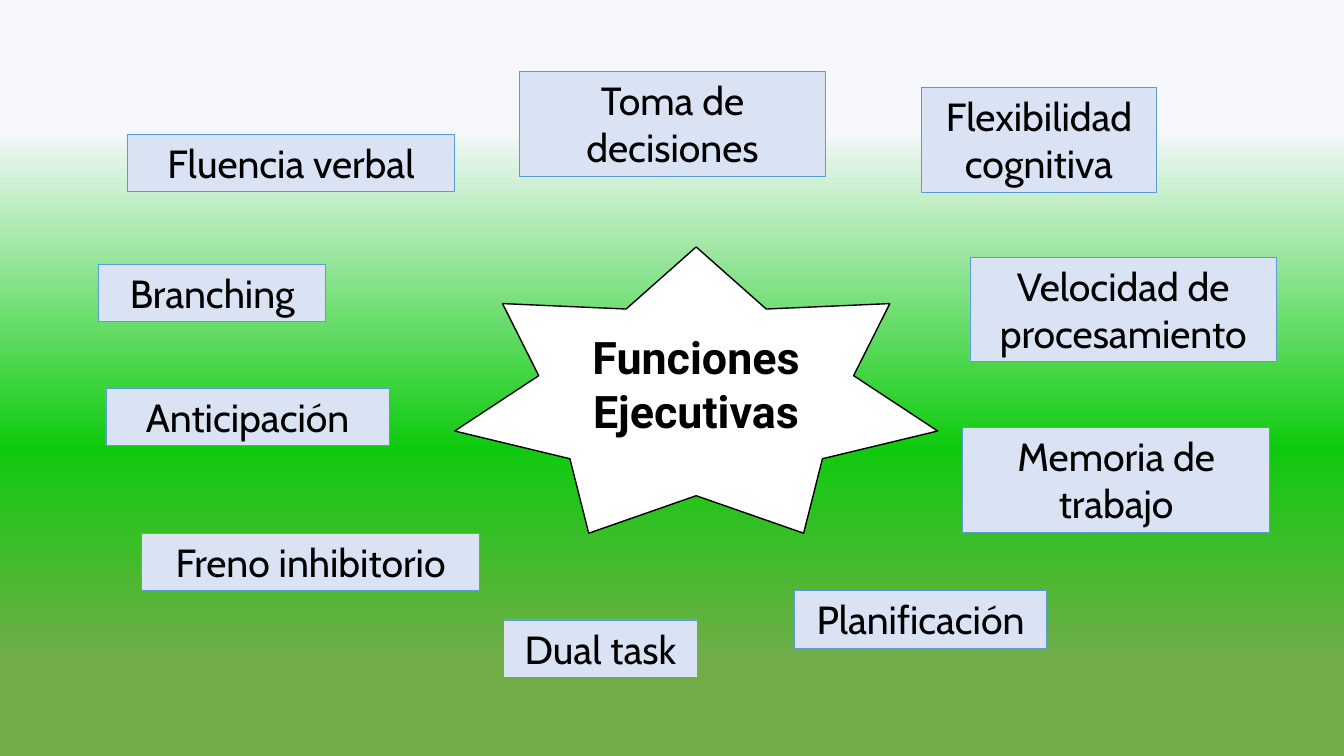
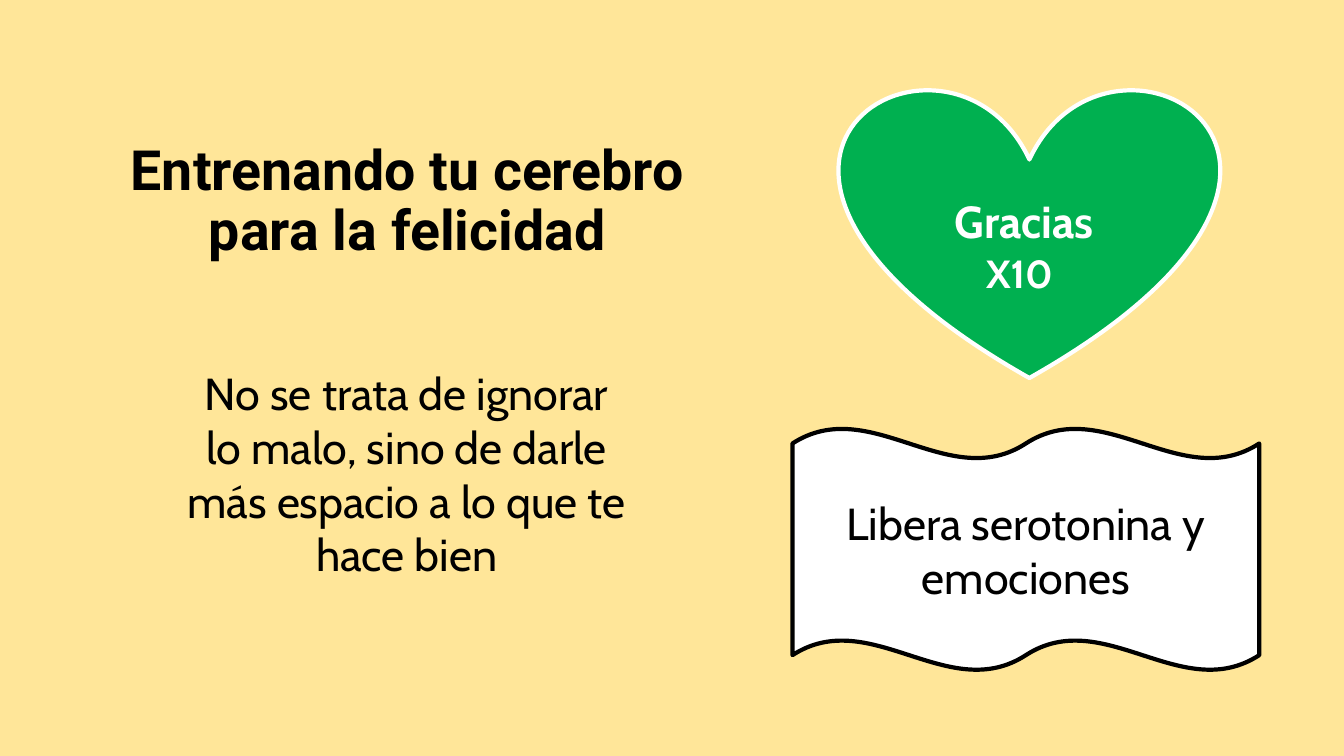
from copy import deepcopy

from pptx import Presentation
from pptx.dml.color import RGBColor
from pptx.enum.shapes import MSO_SHAPE as Kind
from pptx.enum.text import MSO_ANCHOR as Anchor, PP_ALIGN as Align
from pptx.oxml.ns import qn
from pptx.util import Emu, Pt

WIDE, HIGH = 1333, 750
BLACK, WHITE, GREEN, CREAM = "000000", "FFFFFF", "00B050", "FFE699"
PALE, BLUE = "DAE3F3", "5B9BD5"
HEAD, BODY = "Roboto", "Cabin"


def px(size):
    return Emu(size * 9144)


def rgb(code):
    return RGBColor.from_string(code)


class Deck:
    def __init__(self):
        self.file = Presentation()
        self.file.slide_width, self.file.slide_height = px(WIDE), px(HIGH)

    def page(self):
        self.slide = self.file.slides.add_slide(self.file.slide_layouts[6])
        return self.slide.background.fill

    def plain(self, color):
        fill = self.page()
        fill.solid()
        fill.fore_color.rgb = rgb(color)

    def blend(self, stops, angle):
        fill = self.page()
        fill.gradient()
        fill.gradient_angle = angle
        marks = self.slide.element.find(".//" + qn("a:gsLst"))
        while len(marks) < len(stops):
            marks.append(deepcopy(marks[-1]))
        for mark, (place, color) in zip(fill.gradient_stops, stops):
            mark.position = place
            mark.color.rgb = rgb(color)

    def words(self, shape, text, size, font=BODY, color=BLACK, bold=False,
              anchor=Anchor.MIDDLE, space=None):
        frame = shape.text_frame
        frame.word_wrap = True
        frame.vertical_anchor = anchor
        para = frame.paragraphs[0]
        para.alignment = Align.CENTER
        para.line_spacing = space
        run = para.add_run()
        run.text = text
        run.font.name, run.font.size, run.font.bold = font, Pt(size), bold
        run.font.color.rgb = rgb(color)

    def text(self, box, text, size, **style):
        shape = self.slide.shapes.add_textbox(*map(px, box))
        self.words(shape, text, size, **style)

    def shape(self, kind, box, fill, line, width, text, size, **style):
        shape = self.slide.shapes.add_shape(kind, *map(px, box))
        shape.shadow.inherit = False
        shape.fill.solid()
        shape.fill.fore_color.rgb = rgb(fill)
        shape.line.color.rgb = rgb(line)
        shape.line.width = Pt(width)
        self.words(shape, text, size, **style)
        return shape

    def label(self, text, left, top, width, rows=1):
        box = left, top, width, 10 + 47 * rows
        self.shape(Kind.RECTANGLE, box, PALE, BLUE, 0.5, text, 28,
                   anchor=Anchor.TOP)


def skills(deck):
    deck.blend([(0.17, "F6F8FC"), (0.59, "0FCB0F"), (0.87, "70AD47")], 270)
    for item in [
        ("Velocidad de procesamiento", 962, 255, 304, 2),
        ("Memoria de trabajo", 955, 424, 304, 2),
        ("Freno inhibitorio", 140, 529, 336),
        ("Anticipación", 105, 385, 281),
        ("Fluencia verbal", 126, 133, 325),
        ("Dual task", 499, 615, 193),
        ("Flexibilidad cognitiva", 914, 87, 233, 2),
        ("Planificación", 788, 586, 250),
        ("Branching", 98, 262, 225),
        ("Toma de decisiones", 515, 71, 304, 2),
    ]:
        deck.label(*item)
    star = deck.shape(Kind.STAR_7_POINT, (451, 245, 479, 284), WHITE, BLACK, 1,
                      "Funciones Ejecutivas", 32, font=HEAD, bold=True)
    star.adjustments[0] = 0.326


def joy(deck):
    deck.plain(CREAM)
    deck.text((84, 97, 640, 208), "Entrenando tu cerebro para la felicidad",
              39.6, font=HEAD, bold=True, space=0.9)
    deck.text((172, 358, 463, 220),
              "No se trata de ignorar lo malo, sino de darle más espacio "
              "a lo que te hace bien", 32, anchor=Anchor.TOP)
    deck.shape(Kind.HEART, (833, 86, 376, 289), GREEN, WHITE, 3,
               "Gracias ", 32, color=WHITE, bold=True)
    deck.shape(Kind.DOUBLE_WAVE, (786, 425, 463, 240), WHITE, BLACK, 3,
               "Libera serotonina y emociones", 32)
    deck.text((922, 242, 178, 74), "X10", 28, color=WHITE, bold=True,
              anchor=Anchor.TOP)


def main():
    deck = Deck()
    skills(deck)
    joy(deck)
    deck.file.save("out.pptx")


if __name__ == "__main__":
    main()
